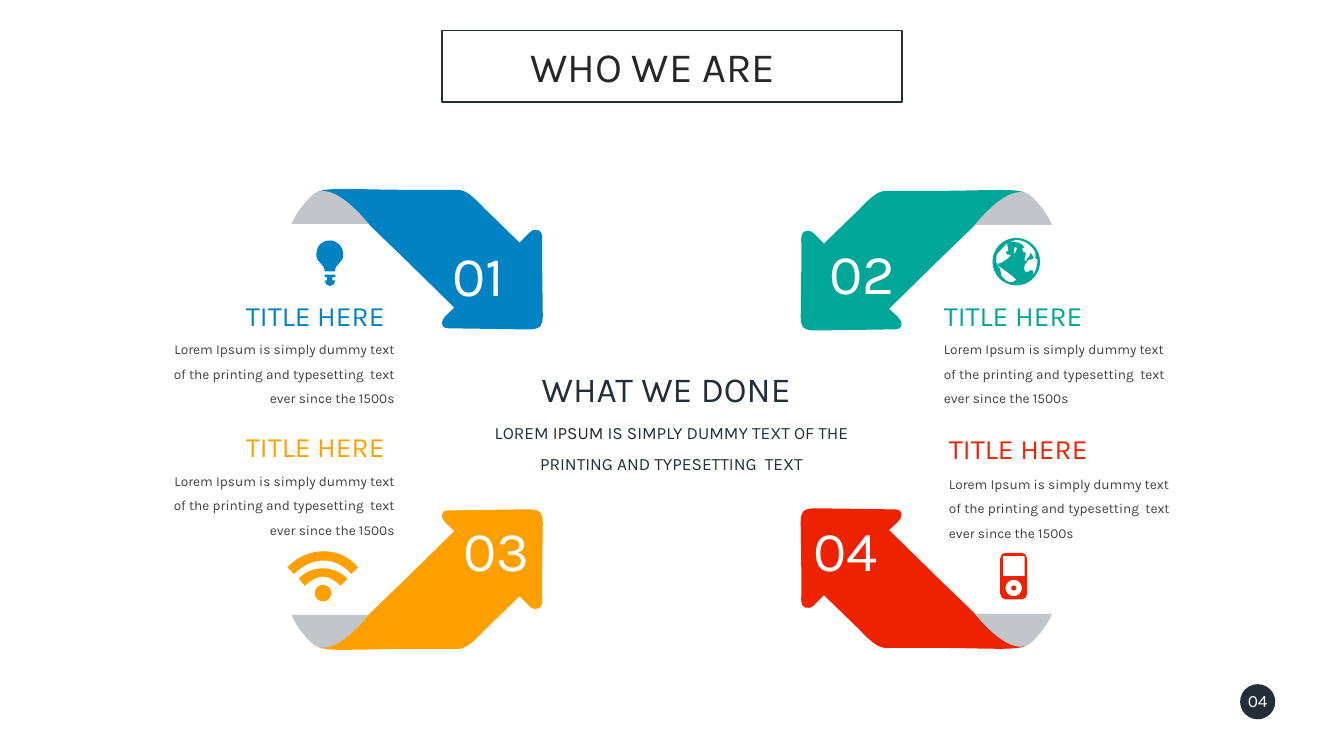
from lxml import etree
from pptx import Presentation
from pptx.dml.color import RGBColor
from pptx.enum.shapes import MSO_SHAPE
from pptx.enum.text import MSO_AUTO_SIZE, PP_ALIGN
from pptx.oxml.ns import qn
from pptx.util import Pt

SCALE = 9144
FONT = "Karla"
LEFT, CENTER, RIGHT = PP_ALIGN.LEFT, PP_ALIGN.CENTER, PP_ALIGN.RIGHT
RECTANGLE, OVAL = MSO_SHAPE.RECTANGLE, MSO_SHAPE.OVAL
FIT_TEXT = MSO_AUTO_SIZE.SHAPE_TO_FIT_TEXT

BLUE = RGBColor(0x01, 0x82, 0xC3)
GREEN = RGBColor(0x00, 0xA6, 0x98)
ORANGE = RGBColor(0xFF, 0x9F, 0x00)
RED = RGBColor(0xEE, 0x22, 0x01)
NAVY = RGBColor(0x24, 0x2E, 0x38)
BLACK = RGBColor(0x26, 0x26, 0x26)
GRAY = RGBColor(0x40, 0x40, 0x40)
SILVER = RGBColor(0xC2, 0xC5, 0xCA)
WHITE = RGBColor(0xFF, 0xFF, 0xFF)

BODY = "Lorem Ipsum is simply dummy text of the printing and typesetting  text ever since the 1500s"
TAGLINE = [
    ("LOREM ", NAVY),
    ("IPSUM", BLACK),
    (" IS SIMPLY DUMMY TEXT OF THE PRINTING AND TYPESETTING  TEXT", NAVY),
]


def circle(x, y, r):
    k = 0.55 * r
    return [
        (x, y - r),
        (x + k, y - r, x + r, y - k, x + r, y),
        (x + r, y + k, x + k, y + r, x, y + r),
        (x - k, y + r, x - r, y + k, x - r, y),
        (x - r, y - k, x - k, y - r, x, y - r),
    ]


ARROW = [[
    (1049, 464), (1051, 443, 1035, 440, 1025, 449), (1005, 469), (938, 404),
    (918, 383, 902, 367, 885, 367), (867, 367, 798, 368, 711, 366),
    (653, 365, 625, 364, 612, 373), (631, 362, 666, 385, 692, 412),
    (713, 434, 777, 495, 777, 495), (879, 595), (862, 611),
    (853, 619, 850, 635, 868, 635), (887, 635, 1000, 637, 1023, 637),
    (1047, 637, 1050, 628, 1050, 611), (1050, 594, 1048, 485, 1049, 464),
]]
FOLD = [[
    (607, 375), (647, 347, 713, 433, 713, 433), (564, 433),
    (569, 418, 588, 391, 607, 375),
]]
BULB = [
    [(628, 536), (633, 536), (633, 542), (628, 542), (628, 548, 633, 553, 638, 553),
     (644, 553, 649, 548, 649, 542), (643, 542), (643, 536), (649, 536), (649, 531), (628, 531)],
    [(664, 493), (664, 477, 653, 465, 638, 465), (622, 465, 612, 476, 612, 493),
     (612, 509, 628, 509, 628, 525), (648, 525), (648, 509, 664, 509, 664, 493)],
]
GLOBE = [
    circle(1966, 506, 46),
    [(1966, 541), (1960, 545), (1954, 546), (1945, 542), (1937, 533), (1935, 521),
     (1927, 507), (1928, 492), (1948, 470), (1951, 485), (1946, 487), (1948, 492),
     (1956, 493), (1951, 499), (1938, 508), (1930, 510), (1934, 516), (1947, 525), (1959, 534)],
    [(1962, 492), (1961, 483), (1964, 477), (1968, 480)],
    [(1997, 533), (2000, 529, 2000, 522, 1994, 522), (1991, 525, 1987, 528, 1983, 525),
     (1979, 521, 1981, 515, 1983, 511), (1990, 502), (1994, 503, 1998, 502, 2000, 498),
     (1994, 489), (1991, 496), (1987, 500), (1988, 505, 1980, 507, 1982, 501), (1985, 489),
     (1980, 488), (1977, 486, 1976, 478, 1981, 479), (1979, 474), (1970, 469), (1953, 467),
     (1966, 464), (1982, 464, 1996, 474, 2003, 488), (2003, 499), (2007, 502),
     (2007, 517, 2003, 526, 1997, 533)],
]
WIFI = [
    [(578, 1119), (590, 1133), (600, 1123, 611, 1115, 625, 1115), (638, 1115, 649, 1123, 659, 1133),
     (672, 1119), (659, 1106, 642, 1099, 625, 1099), (607, 1099, 590, 1106, 578, 1119)],
    circle(625, 1147, 16),
    [(627, 1066), (600, 1066, 575, 1077, 556, 1097), (569, 1110), (585, 1094, 604, 1084, 626, 1084),
     (648, 1084, 665, 1094, 680, 1110), (693, 1097), (676, 1078, 653, 1066, 627, 1066)],
]
PLAYER = [
    [(1977, 1069), (1945, 1069), (1939, 1069, 1935, 1074, 1935, 1080), (1935, 1148),
     (1935, 1154, 1939, 1159, 1945, 1159), (1977, 1159), (1982, 1159, 1987, 1154, 1987, 1148),
     (1987, 1080), (1987, 1074, 1982, 1069, 1977, 1069)],
    [(1982, 1114), (1940, 1114), (1940, 1075), (1982, 1075)],
    circle(1961, 1137, 16),
    circle(1961, 1137, 5),
]

CORNERS = [
    dict(number="01", color=BLUE, mirror=False, flip=False, shift=0, icon=BULB,
         number_at=(865, 460), title_at=(466, 572), body_at=(314, 639)),
    dict(number="02", color=GREEN, mirror=True, flip=False, shift=2, icon=GLOBE,
         number_at=(1594, 457), title_at=(1816, 572), body_at=(1816, 639)),
    dict(number="03", color=ORANGE, mirror=False, flip=True, shift=1622, icon=WIFI,
         number_at=(886, 992), title_at=(466, 826), body_at=(314, 893)),
    dict(number="04", color=RED, mirror=True, flip=True, shift=1620, icon=PLAYER,
         number_at=(1564, 991), title_at=(1826, 830), body_at=(1826, 899)),
]


def px(value):
    return round(value * SCALE)


def place(segment, mirror, flip, shift):
    return [(px(2599 - x if mirror else x), px(shift - y if flip else shift + y))
            for x, y in zip(segment[::2], segment[1::2])]


def bend_lines(shape, segments):
    lines = list(shape.element.iter(qn("a:lnTo")))
    for line, points in zip(lines, segments):
        if len(points) == 3:
            curve = etree.Element(qn("a:cubicBezTo"))
            for x, y in points:
                etree.SubElement(curve, qn("a:pt"), x=str(x - shape.left), y=str(y - shape.top))
            line.getparent().replace(line, curve)


def add_outline(page, contours, color, mirror=False, flip=False, shift=0):
    builder = None
    segments = []
    for contour in contours:
        start, *rest = [place(segment, mirror, flip, shift) for segment in contour]
        if builder is None:
            builder = page.shapes.build_freeform(*start[0], scale=1)
        else:
            builder.move_to(*start[0])
        builder.add_line_segments([points[-1] for points in rest], close=True)
        segments += rest
    shape = builder.convert_to_shape()
    bend_lines(shape, segments)
    shape.shadow.inherit = False
    shape.fill.solid()
    shape.fill.fore_color.rgb = color
    shape.line.fill.background()


def add_text(page, at, size, runs, points, align=LEFT, spacing=None):
    box = page.shapes.add_textbox(*map(px, at + size))
    box.text_frame.word_wrap = True
    box.text_frame.auto_size = FIT_TEXT
    para = box.text_frame.paragraphs[0]
    para.alignment = align
    para.font.name = FONT
    para.font.size = Pt(points)
    if spacing:
        para.line_spacing = spacing
    for text, color in runs:
        span = para.add_run()
        span.text = text
        span.font.color.rgb = color


def add_preset(page, kind, box):
    shape = page.shapes.add_shape(kind, *map(px, box))
    shape.shadow.inherit = False
    return shape


def main():
    deck = Presentation()
    deck.slide_width, deck.slide_height = px(2600), px(1460)
    page = deck.slides.add_slide(deck.slide_layouts[6])

    frame = add_preset(page, RECTANGLE, (855, 59, 890, 138))
    frame.fill.background()
    frame.line.color.rgb = NAVY
    frame.line.width = Pt(2.25)
    add_text(page, (1016, 74), (618, 108), [("WHO WE ARE", BLACK)], 58)

    for corner in CORNERS:
        color, mirror = corner["color"], corner["mirror"]
        placing = (mirror, corner["flip"], corner["shift"])
        add_outline(page, ARROW, color, *placing)
        add_outline(page, FOLD, SILVER, *placing)
        add_outline(page, corner["icon"], color)
        add_text(page, corner["number_at"], (165, 141), [(corner["number"], WHITE)], 78)
        add_text(page, corner["title_at"], (337, 75), [("TITLE HERE", color)], 39)
        add_text(page, corner["body_at"], (459, 154), [(BODY, GRAY)], 19,
                 LEFT if mirror else RIGHT, 1.5)

    add_text(page, (1038, 705), (591, 92), [("WHAT WE DONE", NAVY)], 49)
    add_text(page, (906, 791), (786, 133), TAGLINE, 24, CENTER, 1.5)

    badge = add_preset(page, OVAL, (2399, 1323, 68, 68))
    badge.fill.solid()
    badge.fill.fore_color.rgb = NAVY
    badge.line.fill.background()
    add_text(page, (2404, 1330), (74, 51), [("04", WHITE)], 24)

    deck.save("out.pptx")


if __name__ == "__main__":
    main()
